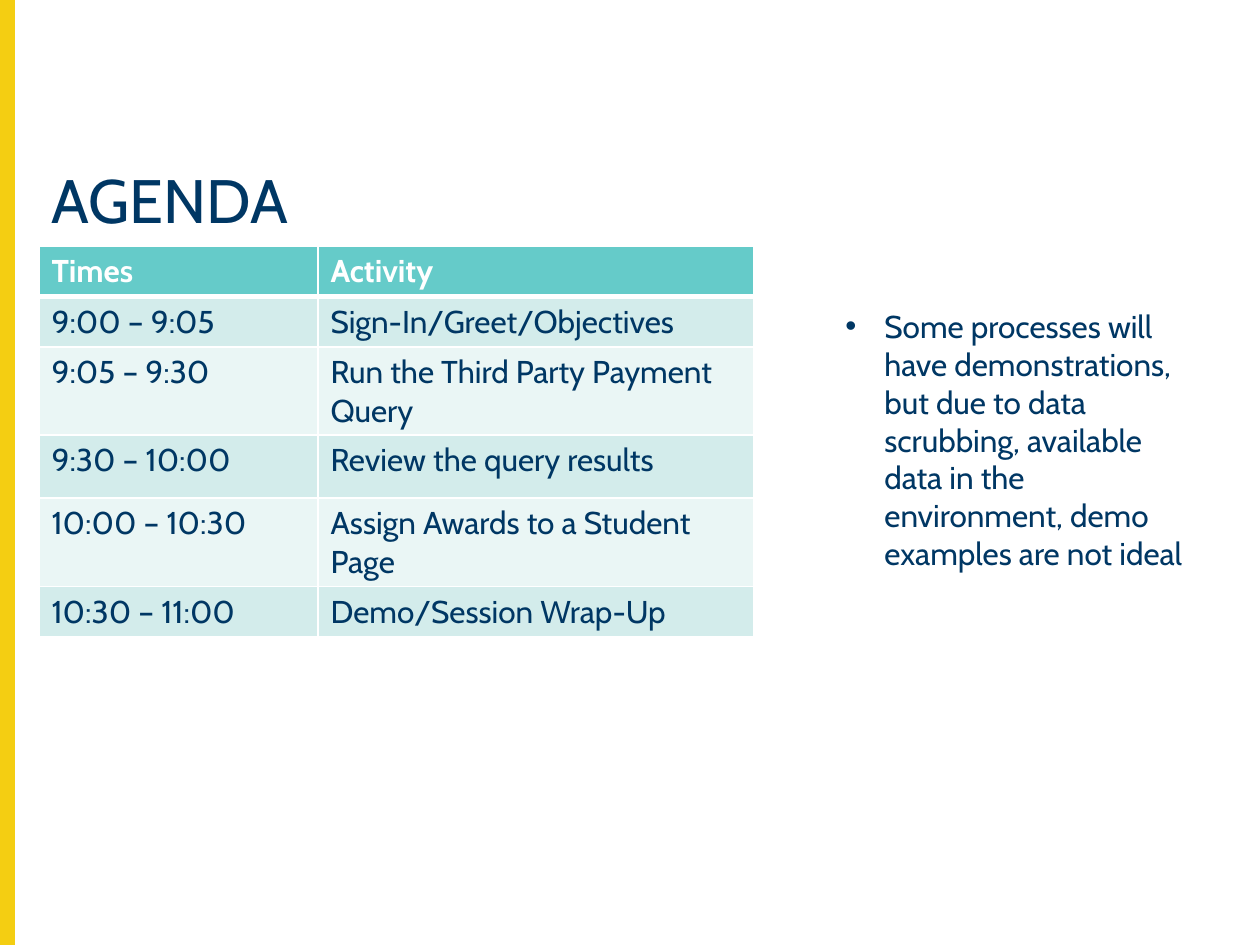
from dataclasses import dataclass

from lxml import etree
from pptx import Presentation
from pptx import util as u
from pptx.dml.color import RGBColor
from pptx.enum import shapes, text
from pptx.oxml.ns import qn

EMU_PER_PX = 914400 // 126
FONT = "Cabin"
COLORS = {
    "navy": "003764",
    "yellow": "F4CE12",
    "teal": "65CBC9",
    "band_dark": "D3ECEB",
    "band_light": "EAF6F5",
    "white": "FFFFFF",
}


@dataclass(frozen=True)
class Box:
    left: int
    top: int
    width: int
    height: int

    def emu(self) -> tuple:
        return tuple(px(n) for n in (self.left, self.top, self.width, self.height))


@dataclass(frozen=True)
class AgendaRow:
    times: str
    activity: str
    height: int = 47


AGENDA = [
    AgendaRow("Times", "Activity"),
    AgendaRow("9:00 – 9:05", "Sign-In/Greet/Objectives"),
    AgendaRow("9:05 – 9:30", "Run the Third Party Payment Query"),
    AgendaRow("9:30 – 10:00", "Review the query results", 63),
    AgendaRow("10:00 – 10:30", "Assign Awards to a Student Page", 58),
    AgendaRow("10:30 – 11:00", "Demo/Session Wrap-Up"),
]
COLUMN_WIDTHS = (279, 436)
NOTE = ("Some processes will have demonstrations, but due to data scrubbing, "
        "available data in the environment, demo examples are not ideal")


def px(length: int) -> u.Emu:
    return u.Emu(length * EMU_PER_PX)


def rgb(name: str) -> RGBColor:
    return RGBColor.from_string(COLORS[name])


def add_run(paragraph, words: str, size: int, color: str, bold: bool = False) -> None:
    run = paragraph.add_run()
    run.text = words
    run.font.name = FONT
    run.font.size = u.Pt(size)
    run.font.bold = bold
    run.font.color.rgb = rgb(color)


def add_text_box(slide, box: Box):
    """Add a wrapping, top-anchored text box and return its first paragraph."""
    frame = slide.shapes.add_textbox(*box.emu()).text_frame
    frame.word_wrap = True
    frame.vertical_anchor = text.MSO_ANCHOR.TOP
    return frame.paragraphs[0]


def set_bullet(paragraph, indent: int) -> None:
    properties = paragraph._p.get_or_add_pPr()
    properties.set("marL", str(px(indent)))
    properties.set("indent", str(-px(indent)))
    font = etree.SubElement(properties, qn("a:buFont"))
    font.set("typeface", "Arial")
    etree.SubElement(properties, qn("a:buChar")).set("char", "•")


def style_cell(cell, fill: str, bottom_width: int) -> None:
    # Border lines must come before the fill in the cell properties
    properties = cell._tc.get_or_add_tcPr()
    for side, width in (("L", 1), ("R", 1), ("T", 1), ("B", bottom_width)):
        line = etree.SubElement(properties, qn(f"a:ln{side}"))
        line.set("w", str(u.Pt(width)))
        solid = etree.SubElement(line, qn("a:solidFill"))
        etree.SubElement(solid, qn("a:srgbClr")).set("val", COLORS["white"])
    cell.fill.solid()
    cell.fill.fore_color.rgb = rgb(fill)


def add_agenda(slide, box: Box) -> None:
    table = slide.shapes.add_table(len(AGENDA), len(COLUMN_WIDTHS), *box.emu()).table
    for column, width in zip(table.columns, COLUMN_WIDTHS):
        column.width = px(width)
    for index, entry in enumerate(AGENDA):
        table.rows[index].height = px(entry.height)
        header = index == 0
        fill = "teal" if header else "band_dark" if index % 2 else "band_light"
        # The heavy rule under the header is shared with the row below it
        for column, words in enumerate((entry.times, entry.activity)):
            cell = table.cell(index, column)
            style_cell(cell, fill, 3 if header else 1)
            if index == 1:
                cell._tc.tcPr.find(qn("a:lnT")).set("w", str(u.Pt(3)))
            add_run(cell.text_frame.paragraphs[0], words, 18,
                    "white" if header else "navy", header)


def main() -> None:
    presentation = Presentation()
    presentation.slide_width = px(1260)
    presentation.slide_height = px(945)
    slide = presentation.slides.add_slide(presentation.slide_layouts[6])

    # Accent bar on the left edge
    bar = slide.shapes.add_shape(shapes.MSO_SHAPE.RECTANGLE, *Box(0, 0, 14, 945).emu())
    bar.shadow.inherit = False
    bar.fill.solid()
    bar.fill.fore_color.rgb = rgb("yellow")
    bar.line.color.rgb = rgb("yellow")
    bar.line.width = u.Pt(1)

    # Title
    title = add_text_box(slide, Box(39, 164, 1176, 100))
    title.line_spacing = 0.9
    add_run(title, "AGENDA", 35, "navy")

    # Schedule table
    add_agenda(slide, Box(39, 246, sum(COLUMN_WIDTHS), sum(row.height for row in AGENDA)))

    # Side note
    note = add_text_box(slide, Box(833, 301, 383, 280))
    set_bullet(note, 39)
    add_run(note, NOTE, 18, "navy")

    presentation.save("out.pptx")


if __name__ == "__main__":
    main()
